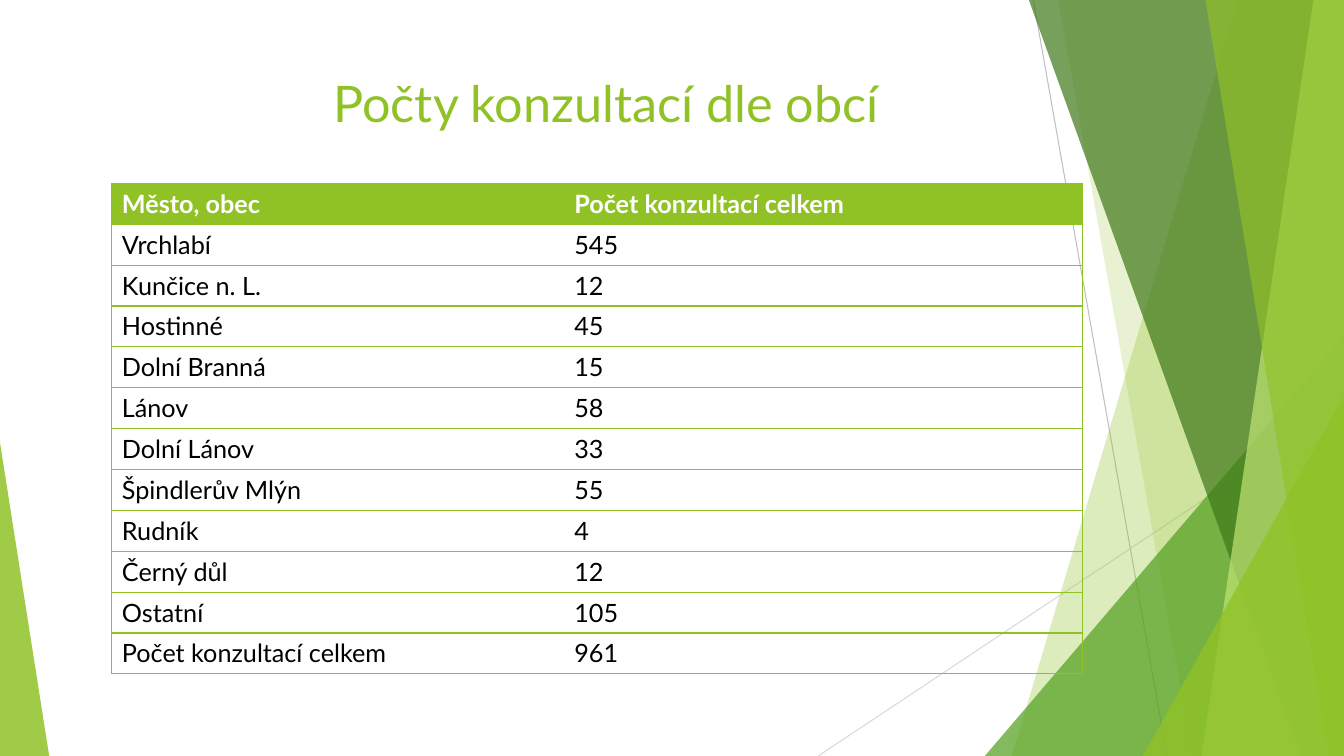
"""Build a slide with a table of consultations by town."""
import dataclasses

import lxml.etree
import pptx
import pptx.dml.color
import pptx.enum.shapes
import pptx.enum.text
import pptx.oxml.ns
import pptx.util

Cm = pptx.util.Cm
qn = pptx.oxml.ns.qn
WIDTH, HEIGHT = 33.87, 19.05


@dataclasses.dataclass(frozen=True)
class Theme:
    font: str = "Lato"
    lime: str = "90C226"
    pale: str = "C0E474"
    leaf: str = "54A021"
    forest: str = "3F7819"
    gray: str = "BFBFBF"
    silver: str = "D9D9D9"
    white: str = "FFFFFF"
    black: str = "000000"
    title: int = 36
    body: int = 18
    border: float = 1
    hair: float = 0.75


THEME = Theme()

ROWS = [
    ("Město, obec", "Počet konzultací celkem"),
    ("Vrchlabí", "545"),
    ("Kunčice n. L.", "12"),
    ("Hostinné", "45"),
    ("Dolní Branná", "15"),
    ("Lánov", "58"),
    ("Dolní Lánov", "33"),
    ("Špindlerův Mlýn", "55"),
    ("Rudník", "4"),
    ("Černý důl", "12"),
    ("Ostatní", "105"),
    ("Počet konzultací celkem", "961"),
]


def rgb(color):
    return pptx.dml.color.RGBColor.from_string(color)


def style(text, size, color, bold=False):
    font = text.font
    font.name = THEME.font
    font.size = pptx.util.Pt(size)
    font.bold = bold
    font.color.rgb = rgb(color)


def paint(shape, color, alpha):
    shape.shadow.inherit = False
    shape.fill.solid()
    shape.fill.fore_color.rgb = rgb(color)
    tint = shape.element.spPr.find(".//" + qn("a:srgbClr"))
    lxml.etree.SubElement(tint, qn("a:alpha"), val=str(alpha * 1000))
    shape.line.fill.background()


def add_line(slide, start, end, color):
    kind = pptx.enum.shapes.MSO_CONNECTOR.STRAIGHT
    line = slide.shapes.add_connector(kind, *map(Cm, start + end))
    line.line.color.rgb = rgb(color)
    line.line.width = pptx.util.Pt(THEME.hair)
    lxml.etree.SubElement(line.element.spPr, qn("a:effectLst"))


def add_band(slide, top, base, color, alpha):
    build = slide.shapes.build_freeform(Cm(top), 0)
    corners = [(WIDTH, 0), (WIDTH, HEIGHT), (base, HEIGHT)]
    build.add_line_segments([(Cm(x), Cm(y)) for x, y in corners])
    paint(build.convert_to_shape(), color, alpha)


def add_wedge(slide, left, width, height, apex, color, alpha):
    kind = pptx.enum.shapes.MSO_SHAPE.ISOSCELES_TRIANGLE
    wedge = slide.shapes.add_shape(
        kind, Cm(left), Cm(HEIGHT - height), Cm(width), Cm(height))
    wedge.adjustments[0] = apex
    paint(wedge, color, alpha)


def add_decor(slide):
    add_line(slide, (26.04, 0), (29.41, HEIGHT), THEME.gray)
    add_line(slide, (WIDTH, 10.24), (20.62, HEIGHT), THEME.silver)
    add_band(slide, 31.19, 25.5, THEME.lime, 30)
    add_band(slide, 26.67, 30.05, THEME.lime, 20)
    add_wedge(slide, 24.82, 9.05, 10.59, 1, THEME.leaf, 72)
    add_band(slide, 25.93, 32.79, THEME.forest, 70)
    add_band(slide, 33.1, 30.28, THEME.pale, 70)
    add_band(slide, 30.38, 33.48, THEME.lime, 65)
    add_wedge(slide, 28.8, 5.07, 9.07, 1, THEME.lime, 80)
    add_wedge(slide, 0, 1.24, 7.9, 0, THEME.lime, 85)


def set_title(slide, text):
    title = slide.shapes.title
    title.left, title.top = Cm(3.05), Cm(1.7)
    title.width, title.height = Cm(24.46), Cm(3.66)
    frame = title.text_frame
    frame.text = text
    frame.vertical_anchor = pptx.enum.text.MSO_ANCHOR.TOP
    line = frame.paragraphs[0]
    line.alignment = pptx.enum.text.PP_ALIGN.CENTER
    style(line, THEME.title, THEME.lime)
    title.element.getparent().append(title.element)


def set_border(cell, shown):
    props = cell._tc.get_or_add_tcPr()
    for side in "LRTB":
        edge = lxml.etree.SubElement(
            props, qn("a:ln" + side), w=str(pptx.util.Pt(THEME.border)))
        if side in shown:
            fill = lxml.etree.SubElement(edge, qn("a:solidFill"))
            lxml.etree.SubElement(fill, qn("a:srgbClr"), val=THEME.lime)
        else:
            lxml.etree.SubElement(edge, qn("a:noFill"))


def fill_cell(cell, text, head, shown):
    cell.text = text
    color = THEME.white if head else THEME.black
    style(cell.text_frame.paragraphs[0], THEME.body, color, head)
    set_border(cell, shown)
    if head:
        cell.fill.solid()
        cell.fill.fore_color.rgb = rgb(THEME.lime)
    else:
        cell.fill.background()


def add_grid(slide, rows, widths, height):
    frame = slide.shapes.add_table(
        len(rows), len(widths), Cm(2.82), Cm(4.62),
        Cm(sum(widths)), Cm(height * len(rows)))
    table = frame.table
    table.horz_banding = False
    for column, width in zip(table.columns, widths):
        column.width = Cm(width)
    for r, row in enumerate(rows):
        table.rows[r].height = Cm(height)
        for text, cell, side in zip(row, table.rows[r].cells, "LR"):
            fill_cell(cell, text, r == 0, side + "TB")


def main():
    deck = pptx.Presentation()
    deck.slide_width, deck.slide_height = Cm(WIDTH), Cm(HEIGHT)
    slide = deck.slides.add_slide(deck.slide_layouts.get_by_name("Title Only"))
    add_decor(slide)
    set_title(slide, "Počty konzultací dle obcí")
    add_grid(slide, ROWS, (11.4, 13.06), 1.03)
    deck.save("out.pptx")


if __name__ == "__main__":
    main()
